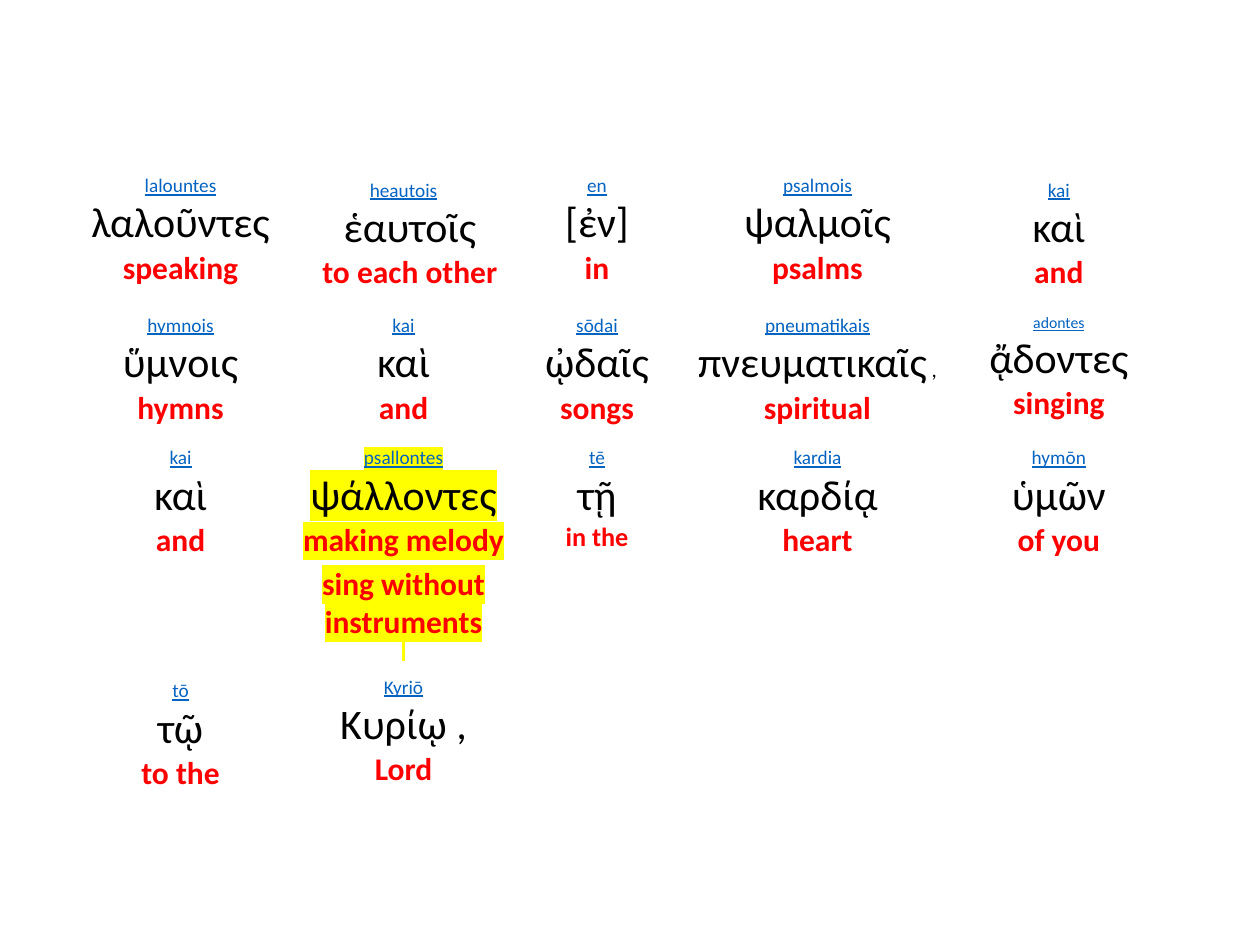
from lxml import etree
from pptx import Presentation
from pptx.dml.color import RGBColor
from pptx.enum.text import MSO_ANCHOR, PP_ALIGN
from pptx.oxml.ns import qn
from pptx.util import Cm, Pt

CENTER = PP_ALIGN.CENTER
TOP, MIDDLE = MSO_ANCHOR.TOP, MSO_ANCHOR.MIDDLE
BLANK = 6

THEME = {
    "font": "Calibri",
    "paper": "FFFFFF",
    "mark": "FFFF00",
    "translit": {"size": 11, "color": "0563C1", "bold": False, "underline": True},
    "greek": {"size": 24, "color": "000000", "bold": False, "underline": False},
    "english": {"size": 18, "color": "FF0000", "bold": True, "underline": False},
    "comma": {"size": 12, "color": "000000", "bold": False, "underline": False},
    "tail": {"size": 9, "color": "000000", "bold": False, "underline": False},
}

# Each word: transliteration, Greek, English
VERSE = [
    [("lalountes", "λαλοῦντες", "speaking"), ("heautois", "ἑαυτοῖς", "to each other"),
     ("en", "[ἐν]", "in"), ("psalmois", "ψαλμοῖς", "psalms"), ("kai", "καὶ", "and")],
    [("hymnois", "ὕμνοις", "hymns"), ("kai", "καὶ", "and"), ("sōdai", "ᾠδαῖς", "songs"),
     ("pneumatikais", "πνευματικαῖς", "spiritual"), ("adontes", "ᾄδοντες", "singing")],
    [("kai", "καὶ", "and"), ("psallontes", "ψάλλοντες", "making melody"),
     ("tē", "τῇ", "in the"), ("kardia", "καρδίᾳ", "heart"), ("hymōn", "ὑμῶν", "of you")],
    [("tō", "τῷ", "to the"), ("Kyriō", "Κυρίῳ ,", "Lord")],
]
COL_WIDTHS = [4.34, 4.65, 3.15, 5.74, 3.99]
ROW_HEIGHTS = [2.82, 2.67, 4.62, 2.44]
SIZES = {"adontes": 9, "in the": 15}
MIDDLE_CELLS = {(0, 1), (0, 4), (3, 0)}
INDENTED = "heautois"
HIGHLIGHTED = "psallontes"


def add_run(p, text, style, marked=False):
    fmt = THEME[style]
    r = p.add_run()
    r.text = text
    values = {"name": THEME["font"], "size": Pt(SIZES.get(text, fmt["size"])),
              "bold": fmt["bold"], "underline": fmt["underline"]}
    for name, value in values.items():
        setattr(r.font, name, value)
    r.font.color.rgb = RGBColor.from_string(fmt["color"])
    if marked:
        highlight = etree.Element(qn("a:highlight"))
        etree.SubElement(highlight, qn("a:srgbClr"), val=THEME["mark"])
        r.font._element.find(qn("a:solidFill")).addnext(highlight)
    return r


def add_break(p, r):
    """Break the line at the size of the run before it."""
    p.add_line_break()
    etree.SubElement(p._p[-1], qn("a:rPr"), sz=str(int(r.font.size.pt * 100)))


prs = Presentation()
prs.slide_width, prs.slide_height = Cm(25.4), Cm(19.05)
s = prs.slides.add_slide(prs.slide_layouts[BLANK])
table = s.shapes.add_table(len(ROW_HEIGHTS), len(COL_WIDTHS), Cm(1.47), Cm(3.51),
                           Cm(sum(COL_WIDTHS)), Cm(sum(ROW_HEIGHTS))).table
for column, width in zip(table.columns, COL_WIDTHS):
    column.width = Cm(width)
for row, height in zip(table.rows, ROW_HEIGHTS):
    row.height = Cm(height)

for cell in table.iter_cells():
    cell.fill.solid()
    cell.fill.fore_color.rgb = RGBColor.from_string(THEME["paper"])
    cell.margin_left = cell.margin_right = Cm(0.15)
    cell.margin_top = cell.margin_bottom = 0

for i, words in enumerate(VERSE):
    for j, (translit, greek, english) in enumerate(words):
        cell = table.cell(i, j)
        cell.vertical_anchor = MIDDLE if (i, j) in MIDDLE_CELLS else TOP
        if i == 0 and (i, j) in MIDDLE_CELLS:
            cell.margin_bottom = Cm(0.34)
        marked = translit == HIGHLIGHTED
        tf = cell.text_frame
        p = tf.paragraphs[0]
        r = add_run(p, translit, "translit", marked)
        if translit == INDENTED:
            p = tf.add_paragraph()
            p._p.get_or_add_pPr().set("marL", str(Cm(0.26)))
        else:
            add_break(p, r)
        r = add_run(p, greek, "greek", marked)
        if translit == "pneumatikais":
            add_run(p, " ,", "comma")
        if translit == "lalountes":
            p = tf.add_paragraph()
        else:
            add_break(p, r)
        add_run(p, english, "english", marked)
        if marked:
            p.space_after = Pt(3)
            add_run(tf.add_paragraph(), "sing without instruments", "english", marked)
            add_run(tf.add_paragraph(), " ", "tail", marked)
        for p in tf.paragraphs:
            p.alignment = CENTER

prs.save("out.pptx")
